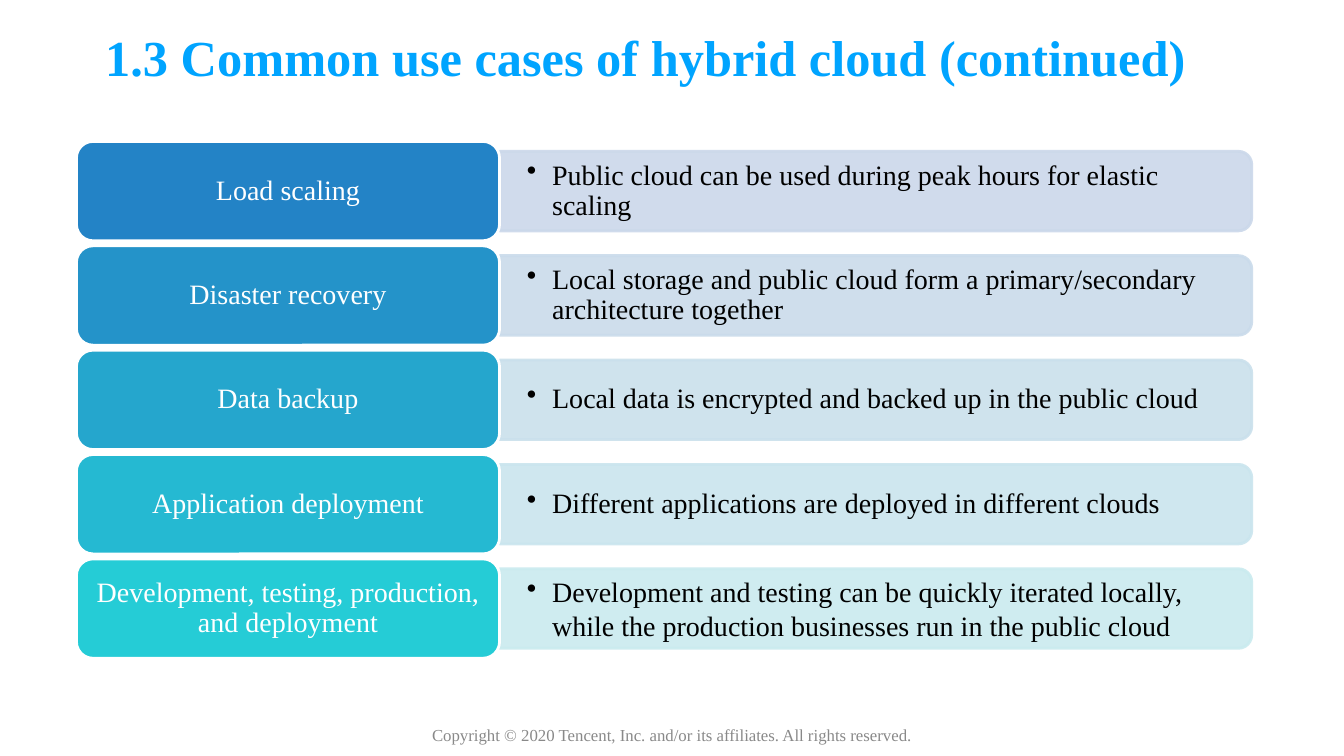
from lxml import etree
from pptx import Presentation
from pptx import util as u
from pptx.dml.color import RGBColor
from pptx.enum import shapes, text
from pptx.oxml import ns

COLORS = {"title": "00A4FF", "footer": "898989", "ink": "000000", "white": "FFFFFF"}

USE_CASES = [
    ("Load scaling", "2383C6", "CBD8EA", 0.9,
     "Public cloud can be used during peak hours for elastic scaling"),
    ("Disaster recovery", "2493C9", "CADBEB", 0.9,
     "Local storage and public cloud form a primary/secondary architecture together"),
    ("Data backup", "25A6CD", "CAE0EC", 0.9,
     "Local data is encrypted and backed up in the public cloud"),
    ("Application deployment", "25B9D2", "CAE5EE", 0.9,
     "Different applications are deployed in different clouds"),
    ("Development, testing, production, and deployment", "25CCD6", "CAEBEF", None,
     "Development and testing can be quickly iterated locally, "
     "while the production businesses run in the public cloud"),
]

ROW_TOP, ROW_PITCH = 101, 74.55
LABEL_LEFT, LABEL_WIDTH, LABEL_HEIGHT = 54.6, 302.3, 71
BAR_LEFT, BAR_WIDTH, BAR_HEIGHT = 356.9, 537.2, 56.8
DETAIL_WIDTH, DETAIL_HEIGHT = 534.4, 51.2


class SlideBuilder:
    """Draws styled elements, measured in points, on one slide."""

    def __init__(self, page, font="Times New Roman"):
        self.page = page
        self.font = font

    def fill_text(self, box, words, size, color, align, spacing=None, bold=False,
                  margins=(7.2, 3.6), bullet=False):
        frame = box.text_frame
        frame.word_wrap = True
        frame.vertical_anchor = text.MSO_ANCHOR.MIDDLE
        frame.margin_left = frame.margin_right = u.Pt(margins[0])
        frame.margin_top = frame.margin_bottom = u.Pt(margins[1])
        para = frame.paragraphs[0]
        para.alignment = align
        para.line_spacing = spacing
        if bullet:
            self.add_bullet(para, color)
        span = para.add_run()
        span.text = words
        span.font.name = self.font
        span.font.size = u.Pt(size)
        span.font.bold = bold
        span.font.color.rgb = RGBColor.from_string(color)

    def add_bullet(self, para, color, indent=18):
        para.level = 1
        props = para._p.get_or_add_pPr()
        props.set("marL", str(u.Pt(indent)))
        props.set("indent", str(-u.Pt(indent)))
        tint = etree.SubElement(props, ns.qn("a:buClr"))
        etree.SubElement(tint, ns.qn("a:srgbClr"), val=color)
        etree.SubElement(props, ns.qn("a:buChar"), char="•")

    def add_text(self, left, top, width, height, words, size, color, align, **style):
        box = self.page.shapes.add_textbox(*map(u.Pt, (left, top, width, height)))
        self.fill_text(box, words, size, color, align, **style)

    def add_panel(self, kind, left, top, width, height, fill, line):
        panel = self.page.shapes.add_shape(kind, *map(u.Pt, (left, top, width, height)))
        panel.shadow.inherit = False
        panel.adjustments[0] = 0.167
        panel.fill.solid()
        panel.fill.fore_color.rgb = RGBColor.from_string(fill)
        panel.line.color.rgb = RGBColor.from_string(line)
        panel.line.width = u.Pt(2)
        return panel

    def add_bar(self, left, top, width, height, color):
        shift = (width - height) / 2
        bar = self.add_panel(shapes.MSO_SHAPE.ROUND_2_SAME_RECTANGLE,
                             left + shift, top - shift, height, width, color, color)
        bar.rotation = 90
        for tint in bar._element.spPr.iter(ns.qn("a:srgbClr")):
            etree.SubElement(tint, ns.qn("a:alpha"), val="90000")

    def add_label(self, left, top, width, height, words, color):
        label = self.add_panel(shapes.MSO_SHAPE.ROUNDED_RECTANGLE,
                               left, top, width, height, color, COLORS["white"])
        self.fill_text(label, words, 20, COLORS["white"], text.PP_ALIGN.CENTER,
                       spacing=0.9, margins=(5.8, 2.9))

    def add_use_case(self, top, name, label_color, bar_color, spacing, detail):
        middle = top + LABEL_HEIGHT / 2
        self.add_bar(BAR_LEFT, middle - BAR_HEIGHT / 2, BAR_WIDTH, BAR_HEIGHT, bar_color)
        self.add_text(BAR_LEFT, middle - DETAIL_HEIGHT / 2, DETAIL_WIDTH, DETAIL_HEIGHT,
                      detail, 20, COLORS["ink"], text.PP_ALIGN.LEFT,
                      spacing=spacing, margins=(19.5, 9.8), bullet=True)
        self.add_label(LABEL_LEFT, top, LABEL_WIDTH, LABEL_HEIGHT, name, label_color)


def main():
    deck = Presentation()
    deck.slide_width, deck.slide_height = u.Pt(960), u.Pt(540)
    builder = SlideBuilder(deck.slides.add_slide(deck.slide_layouts[6]))
    builder.add_text(68, 7.2, 839.5, 71.3,
                     "1.3 Common use cases of hybrid cloud (continued)", 36,
                     COLORS["title"], text.PP_ALIGN.LEFT, spacing=0.9, bold=True)
    builder.add_text(293, 510.5, 374.4, 28.8,
                     "Copyright © 2020 Tencent, Inc. and/or its affiliates. All rights reserved.",
                     12, COLORS["footer"], text.PP_ALIGN.CENTER)
    for row, use_case in enumerate(USE_CASES):
        builder.add_use_case(ROW_TOP + row * ROW_PITCH, *use_case)
    deck.save("out.pptx")


if __name__ == "__main__":
    main()
